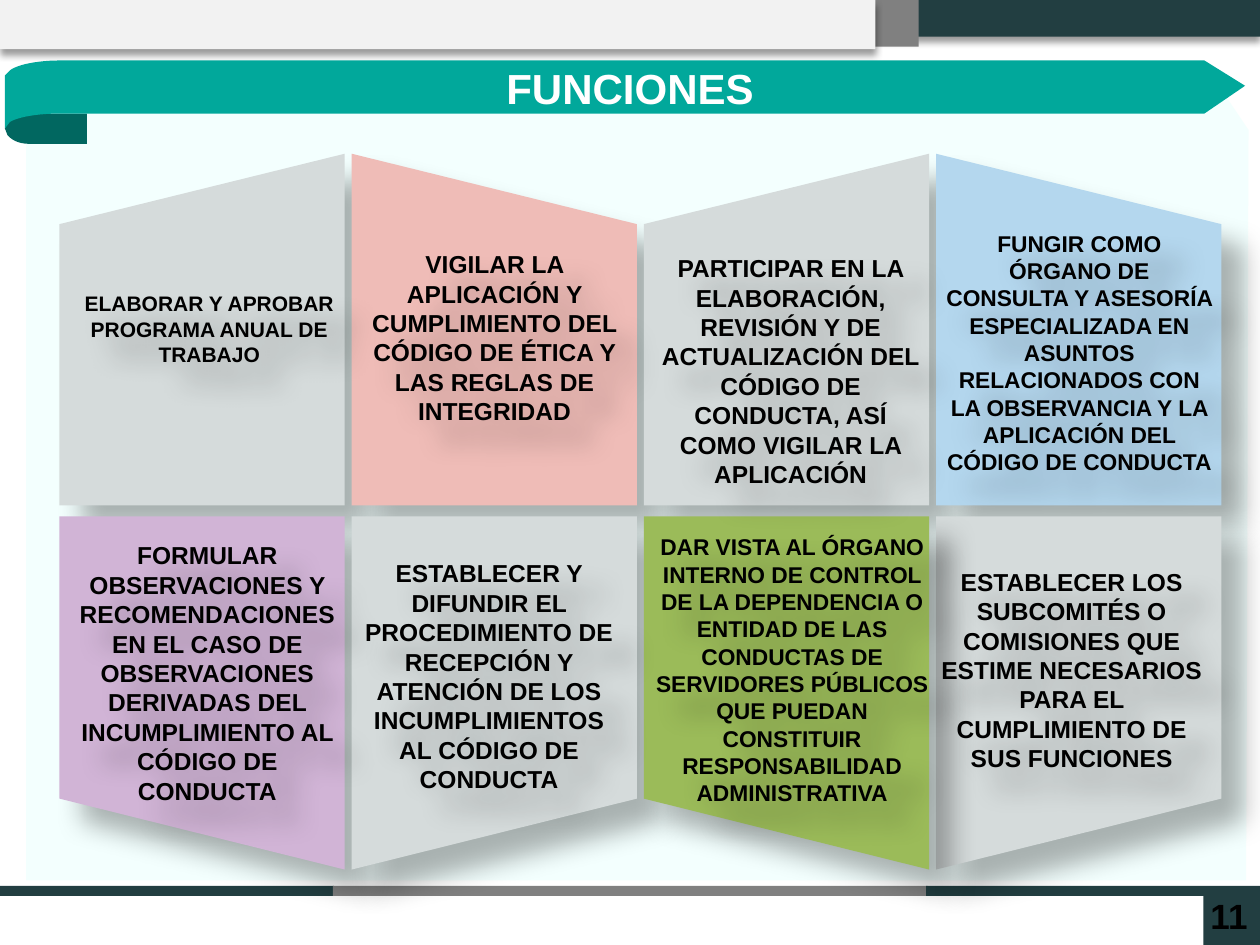
from pptx import Presentation
from pptx.dml.color import RGBColor as RGB
from pptx.enum.shapes import MSO_SHAPE as SHAPE
from pptx.enum.text import MSO_ANCHOR as ANCHOR, MSO_AUTO_SIZE as AUTO, PP_ALIGN as ALIGN
from pptx.oxml import parse_xml
from pptx.oxml.ns import nsdecls, qn
from pptx.util import Cm, Pt

COLORS = {
    "dark": "223E41", "gray": "808080", "light": "F2F2F2", "panel": "F3FFFE",
    "teal": "01A89B", "fold": "016760", "silver": "D5DBDB", "pink": "EFBCB7",
    "blue": "B4D7EE", "purple": "D1B4D6", "green": "9BBB59",
    "black": "000000", "white": "FFFFFF",
}
BAR_SHADOW = (40, 4, 3, 90)
CARD_SHADOW = (30, 15, 18, 45)


def rgb(name):
    return RGB.from_string(COLORS[name])


def outline(segments, steps=12):
    points = []
    for item in segments:
        if len(item) == 2:
            points.append(item)
            continue
        a, b, c, d = points[-1], item[:2], item[2:4], item[4:]
        for i in range(1, steps + 1):
            t = i / steps
            u = 1 - t
            points.append(tuple(
                u**3 * a[k] + 3 * u * u * t * b[k] + 3 * u * t * t * c[k] + t**3 * d[k]
                for k in (0, 1)))
    return [(Cm(x), Cm(y)) for x, y in points]


class Deck:
    font = {"name": "Arial", "bold": True}

    def __init__(self, prs):
        self.s = prs.slides.add_slide(prs.slide_layouts[5])

    def shadow(self, sp, alpha, blur, dist, angle):
        sp.shadow.inherit = False
        effects = sp._element.spPr.find(qn("a:effectLst"))
        effects.append(parse_xml(
            f'<a:outerShdw {nsdecls("a")} blurRad="{Pt(blur)}" dist="{Pt(dist)}" '
            f'dir="{angle * 60000}" algn="tl" rotWithShape="0">'
            f'<a:srgbClr val="{COLORS["black"]}"><a:alpha val="{alpha * 1000}"/>'
            '</a:srgbClr></a:outerShdw>'))

    def paint(self, sp, color, shadow):
        sp.fill.solid()
        sp.fill.fore_color.rgb = rgb(color)
        sp.line.fill.background()
        sp.shadow.inherit = False
        if shadow:
            self.shadow(sp, *shadow)

    def rect(self, box, color, shadow=None):
        sp = self.s.shapes.add_shape(SHAPE.RECTANGLE, *map(Cm, box))
        self.paint(sp, color, shadow)

    def free(self, segments, color, shadow=None):
        points = outline(segments)
        builder = self.s.shapes.build_freeform(*points[0])
        builder.add_line_segments(points[1:], close=True)
        self.paint(builder.convert_to_shape(), color, shadow)

    def fill_text(self, sp, text, size, color, align, **frame):
        tf = sp.text_frame
        for key, value in {"auto_size": AUTO.NONE, "word_wrap": True, **frame}.items():
            setattr(tf, key, value)
        p = tf.paragraphs[0]
        p.alignment = align
        r = p.add_run()
        r.text = text
        for key, value in {**self.font, "size": Pt(size)}.items():
            setattr(r.font, key, value)
        r.font.color.rgb = rgb(color)

    def title(self, box, text):
        sp = self.s.shapes.title
        sp.left, sp.top, sp.width, sp.height = map(Cm, box)
        self.fill_text(sp, text, 24, "white", ALIGN.CENTER,
                       word_wrap=False, vertical_anchor=ANCHOR.MIDDLE)
        self.s.shapes._spTree.append(sp._element)

    def text(self, box, text, size, align=ALIGN.CENTER, shadow=None, **frame):
        sp = self.s.shapes.add_textbox(*map(Cm, box))
        self.fill_text(sp, text, size, "black", align, **frame)
        if shadow:
            self.shadow(sp, *shadow)

    def card(self, column, base, shoulder, tip, color):
        left = 1.2 + 5.89 * column
        right = left + 5.75
        low, high = (left, right) if column % 2 == 0 else (right, left)
        self.free([(low, shoulder), (high, tip), (high, base), (low, base)],
                  color, CARD_SHADOW)


def main():
    prs = Presentation()
    prs.slide_width, prs.slide_height = Cm(25.4), Cm(19.05)
    deck = Deck(prs)

    deck.rect((12.01, 0, 13.39, 0.74), "dark", BAR_SHADOW)
    deck.rect((16.79, 0, 1.73, 0.94), "gray")
    deck.rect((0, 0, 17.65, 0.99), "light", BAR_SHADOW)
    deck.rect((24.26, 17.96, 1.14, 1.09), "dark")
    for left, width, color in ((0, 6.73, "dark"), (6.71, 11.99, "gray"), (18.67, 6.73, "dark")):
        deck.rect((left, 17.86, width, 0.2), color)

    deck.free([(0.53, 1.47), (24.36, 1.42), (25.17, 2.62),
               (25.15, 7.67, 25.15, 12.7, 25.12, 17.75), (0.53, 17.75)], "panel")
    deck.free([(0.58, 2.29), (1.75, 2.29), (1.75, 2.9), (0.58, 2.9),
               (0.38, 2.9, 0.23, 2.82, 0.15, 2.72), (0.1, 2.59), (0.15, 2.46),
               (0.23, 2.36, 0.38, 2.29, 0.58, 2.29)], "fold")
    deck.free([(1.22, 1.22), (24.28, 1.22), (25.1, 1.73), (24.28, 2.29), (1.22, 2.29),
               (0.76, 2.29, 0.36, 2.36, 0.2, 2.46), (0.1, 2.59), (0.1, 1.52), (0.2, 1.42),
               (0.36, 1.3, 0.76, 1.22, 1.22, 1.22)], "teal")
    deck.title((9.93, 1.14, 5.54, 1.27), "FUNCIONES")

    for column, color in enumerate(("silver", "pink", "silver", "blue")):
        deck.card(column, 10.19, 4.52, 3.1, color)
    for column, color in ((0, "purple"), (3, "silver"), (1, "silver"), (2, "green")):
        deck.card(column, 10.41, 16.1, 17.53, color)

    functions = [
        ((7.06, 4.9, 5.82, 3.84), 14,
         "VIGILAR LA APLICACIÓN Y CUMPLIMIENTO DEL CÓDIGO DE ÉTICA Y LAS REGLAS DE INTEGRIDAD"),
        ((12.98, 4.98, 5.92, 5.05), 14,
         "PARTICIPAR EN LA ELABORACIÓN, REVISIÓN Y DE ACTUALIZACIÓN DEL CÓDIGO DE CONDUCTA, "
         "ASÍ COMO VIGILAR LA APLICACIÓN"),
        ((18.82, 4.5, 5.87, 5.82), 13,
         "FUNGIR COMO ÓRGANO DE CONSULTA Y ASESORÍA ESPECIALIZADA EN ASUNTOS RELACIONADOS "
         "CON LA OBSERVANCIA Y LA APLICACIÓN DEL CÓDIGO DE CONDUCTA"),
        ((6.99, 11.13, 5.74, 5.05), 14,
         "ESTABLECER Y DIFUNDIR EL PROCEDIMIENTO DE RECEPCIÓN Y ATENCIÓN DE LOS "
         "INCUMPLIMIENTOS AL CÓDIGO DE CONDUCTA"),
        ((12.88, 10.62, 6.17, 5.82), 13,
         "DAR VISTA AL ÓRGANO INTERNO DE CONTROL DE LA DEPENDENCIA O ENTIDAD DE LAS "
         "CONDUCTAS DE SERVIDORES PÚBLICOS QUE PUEDAN CONSTITUIR RESPONSABILIDAD "
         "ADMINISTRATIVA"),
        ((18.57, 11.3, 6.07, 4.45), 14,
         "ESTABLECER LOS SUBCOMITÉS O COMISIONES QUE ESTIME NECESARIOS PARA EL "
         "CUMPLIMIENTO DE SUS FUNCIONES"),
        ((1.27, 10.77, 5.82, 5.64), 14,
         "FORMULAR OBSERVACIONES Y RECOMENDACIONES EN EL CASO DE OBSERVACIONES DERIVADAS "
         "DEL INCUMPLIMIENTO AL CÓDIGO DE CONDUCTA"),
    ]
    for box, size, text in functions:
        deck.text(box, text, size, shadow=CARD_SHADOW)
    deck.text((1.45, 5.74, 5.54, 1.8), "ELABORAR Y APROBAR PROGRAMA ANUAL DE TRABAJO", 12,
              shadow=CARD_SHADOW, margin_left=Cm(0.13), margin_right=Cm(0.13))
    deck.text((24.1, 17.91, 1.3, 1.12), "11", 20, ALIGN.RIGHT)

    prs.save("out.pptx")


if __name__ == "__main__":
    main()
